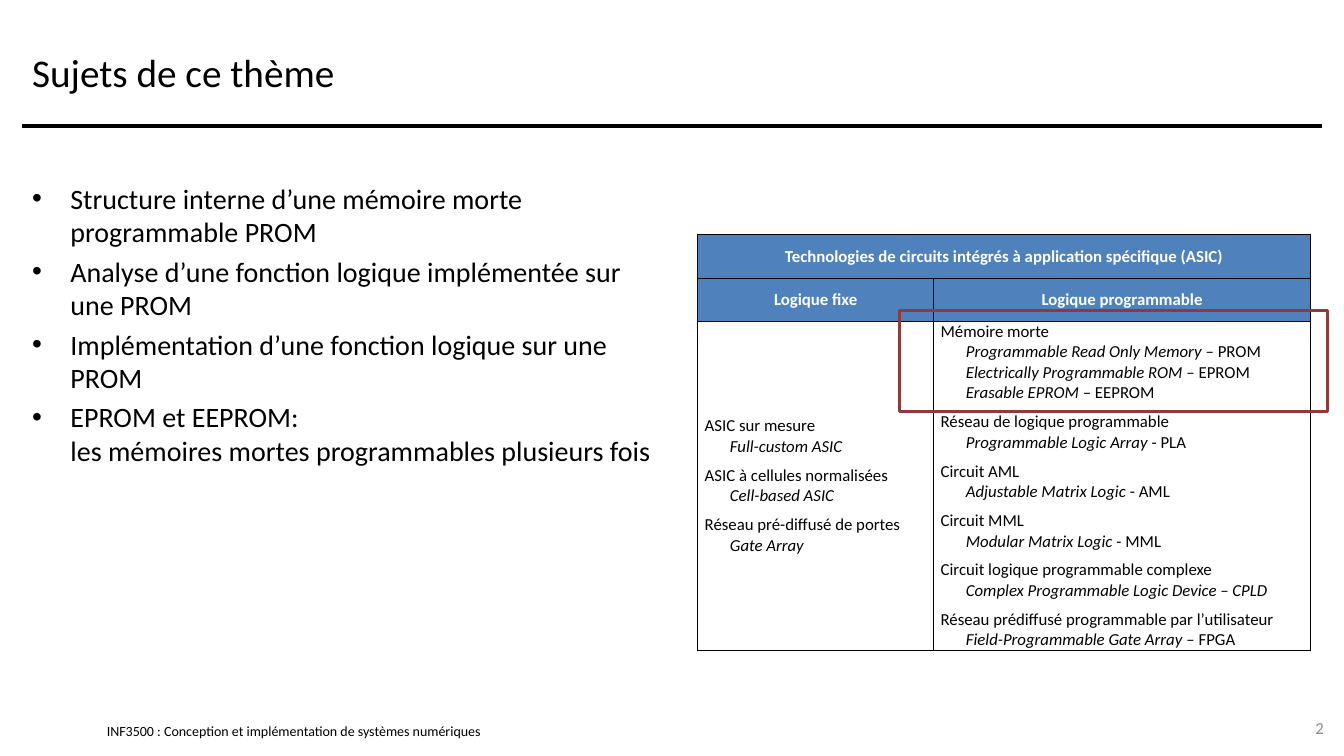
from lxml import etree
from pptx import Presentation
from pptx.dml.color import RGBColor
from pptx.enum.shapes import MSO_CONNECTOR, MSO_SHAPE
from pptx.enum.text import MSO_ANCHOR, PP_ALIGN
from pptx.oxml.ns import qn
from pptx.util import Inches, Pt

BLACK = RGBColor(0x00, 0x00, 0x00)
WHITE = RGBColor(0xFF, 0xFF, 0xFF)
GREY = RGBColor(0x8C, 0x8C, 0x8C)
BLUE = RGBColor(0x4F, 0x81, 0xBD)
RED = RGBColor(0x8E, 0x3B, 0x39)
FONT = "Calibri"

TITLE = "Sujets de ce thème"
FOOTER = "INF3500 : Conception et implémentation de systèmes numériques"
PAGE = "2"
TOPICS = [
    "Structure interne d’une mémoire morte programmable PROM",
    "Analyse d’une fonction logique implémentée sur une PROM",
    "Implémentation d’une fonction logique sur une PROM",
    "EPROM et EEPROM:\vles mémoires mortes programmables plusieurs fois",
]
TABLE_TITLE = "Technologies de circuits intégrés à application spécifique (ASIC)"
# Column heading -> (French name, [(English name in italics, upright ending)])
TECHNOLOGIES = {
    "Logique fixe": [
        ("ASIC sur mesure", [("Full-custom ASIC", "")]),
        ("ASIC à cellules normalisées", [("Cell-based ASIC", "")]),
        ("Réseau pré-diffusé de portes", [("Gate Array", "")]),
    ],
    "Logique programmable": [
        ("Mémoire morte", [
            ("Programmable Read Only Memory", " – PROM"),
            ("Electrically Programmable ROM", " – EPROM"),
            ("Erasable EPROM", " – EEPROM"),
        ]),
        ("Réseau de logique programmable",
         [("Programmable Logic Array", " - PLA")]),
        ("Circuit AML", [("Adjustable Matrix Logic", " - AML")]),
        ("Circuit MML", [("Modular Matrix Logic", " - MML")]),
        ("Circuit logique programmable complexe",
         [("Complex Programmable Logic Device – CPLD", "")]),
        ("Réseau prédiffusé programmable par l’utilisateur",
         [("Field-Programmable Gate Array", " – FPGA")]),
    ],
}
COLUMN_WIDTHS = [2.34, 3.74]
ROW_HEIGHTS = [0.43, 0.43, 3.26]
LEFT, RULE_RIGHT, RULE_Y = 0.22, 13.11, 1.25


def style(run, size, color=BLACK, bold=False, italic=False):
    font = run.font
    font.name, font.size = FONT, Pt(size)
    font.bold, font.italic = bold, italic
    font.color.rgb = color


def hang(paragraph, indent):
    """Indent every line of the paragraph but the first."""
    properties = paragraph._p.get_or_add_pPr()
    properties.set("marL", str(Inches(indent)))
    properties.set("indent", str(-Inches(indent)))
    return properties


def add_text(slide, box, lines, size, color=BLACK, anchor=MSO_ANCHOR.MIDDLE, inset=None):
    frame = slide.shapes.add_textbox(*map(Inches, box)).text_frame
    frame.word_wrap = True
    frame.vertical_anchor = anchor
    if inset is not None:
        frame.margin_left = frame.margin_right = Inches(inset)
        frame.margin_top = frame.margin_bottom = Inches(inset)
    frame.text = "\n".join(lines)
    for paragraph in frame.paragraphs:
        for run in paragraph.runs:
            style(run, size, color)
    return frame


def add_rule(slide):
    rule = slide.shapes.add_connector(
        MSO_CONNECTOR.STRAIGHT, Inches(LEFT), Inches(RULE_Y),
        Inches(RULE_RIGHT), Inches(RULE_Y))
    rule.line.color.rgb = BLACK
    rule.line.width = Pt(3)
    etree.SubElement(rule._element.spPr, qn("a:effectLst"))


def format_cell(cell):
    cell.vertical_anchor = MSO_ANCHOR.MIDDLE
    cell.margin_left = cell.margin_right = Inches(0.07)
    cell.margin_top = cell.margin_bottom = 0
    properties = cell._tc.get_or_add_tcPr()
    for side in ("lnL", "lnR", "lnT", "lnB"):
        border = etree.SubElement(properties, qn(f"a:{side}"), w=str(Pt(1)))
        fill = etree.SubElement(border, qn("a:solidFill"))
        etree.SubElement(fill, qn("a:srgbClr"), val=str(BLACK))
    cell.fill.background()


def fill_heading(cell, heading):
    cell.fill.solid()
    cell.fill.fore_color.rgb = BLUE
    cell.text_frame.text = heading
    paragraph = cell.text_frame.paragraphs[0]
    paragraph.alignment = PP_ALIGN.CENTER
    style(paragraph.runs[0], 12, WHITE, bold=True)


def fill_technologies(cell, technologies):
    frame = cell.text_frame
    for i, (name, variants) in enumerate(technologies):
        paragraph = frame.add_paragraph() if i else frame.paragraphs[0]
        hang(paragraph, 0.25)
        paragraph.space_after = Pt(6)
        paragraph.text = name
        style(paragraph.runs[0], 12)
        for english, ending in variants:
            paragraph.add_line_break()
            for text, italic in ((english, True), (ending, False)):
                if text:
                    run = paragraph.add_run()
                    run.text = text
                    style(run, 12, italic=italic)


def add_technology_table(slide):
    table = slide.shapes.add_table(
        len(ROW_HEIGHTS), len(COLUMN_WIDTHS), Inches(6.92), Inches(2.33),
        Inches(sum(COLUMN_WIDTHS)), Inches(sum(ROW_HEIGHTS))).table
    table.first_row = table.horz_banding = False
    for column, width in zip(table.columns, COLUMN_WIDTHS):
        column.width = Inches(width)
    for row, height in zip(table.rows, ROW_HEIGHTS):
        row.height = Inches(height)
    for cell in table.iter_cells():
        format_cell(cell)
    table.cell(0, 0).merge(table.cell(0, 1))
    fill_heading(table.cell(0, 0), TABLE_TITLE)
    for col, (heading, technologies) in enumerate(TECHNOLOGIES.items()):
        fill_heading(table.cell(1, col), heading)
        fill_technologies(table.cell(2, col), technologies)


def main():
    deck = Presentation()
    deck.slide_width, deck.slide_height = Inches(13.33), Inches(7.5)
    slide = deck.slides.add_slide(deck.slide_layouts[6])

    add_text(slide, (1.06, 7.17, 5.11, 0.17), [FOOTER], 10, inset=0)
    add_rule(slide)
    add_text(slide, (LEFT, 0.17, RULE_RIGHT - LEFT, 1.08), [TITLE], 28)

    topics = add_text(slide, (LEFT, 1.75, 6.36, 5.08), TOPICS, 20, anchor=MSO_ANCHOR.TOP)
    for i, paragraph in enumerate(topics.paragraphs):
        properties = hang(paragraph, 0.38)
        etree.SubElement(properties, qn("a:buFont"), typeface="Arial")
        etree.SubElement(properties, qn("a:buChar"), char="•")
        if i:
            paragraph.space_before = Pt(4)

    page = add_text(slide, (12.56, 7.02, 0.67, 0.4), [PAGE], 12, GREY)
    page.paragraphs[0].alignment = PP_ALIGN.RIGHT

    add_technology_table(slide)

    highlight = slide.shapes.add_shape(
        MSO_SHAPE.RECTANGLE, Inches(8.92), Inches(3.08), Inches(4.25), Inches(1))
    highlight.shadow.inherit = False
    highlight.fill.background()
    highlight.line.color.rgb = RED
    highlight.line.width = Pt(2)

    deck.save("out.pptx")


if __name__ == "__main__":
    main()
